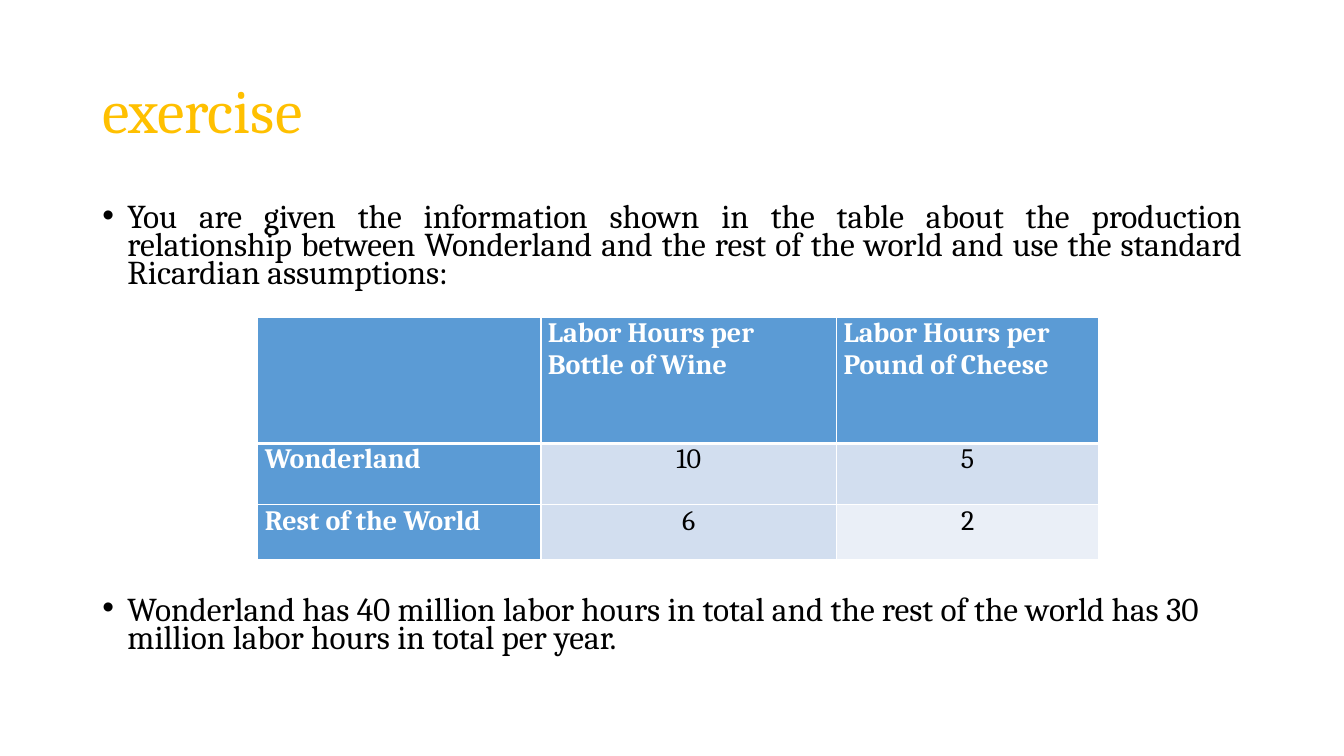
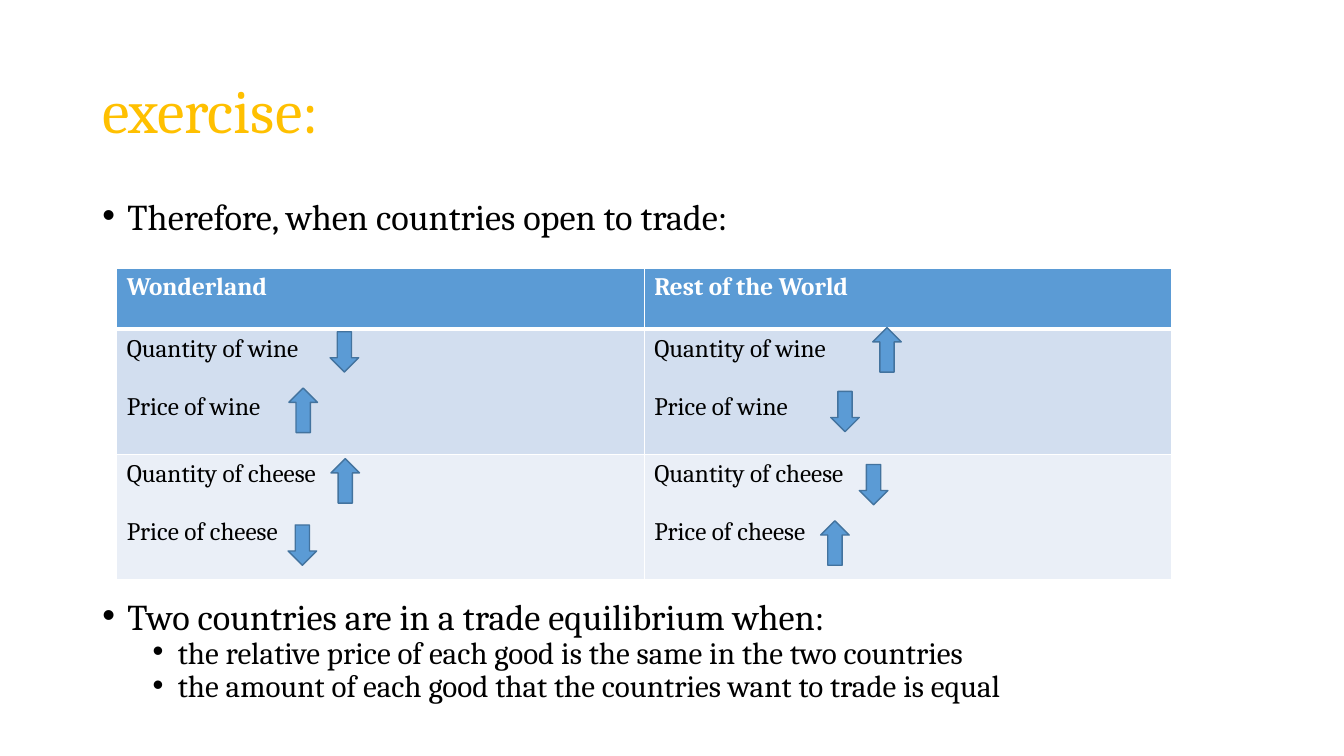
import itertools

import lxml.etree
import pptx
import pptx.dml.color
import pptx.enum.shapes
import pptx.enum.text
import pptx.oxml.ns
import pptx.util

COLUMNS, ROWS = 160, 90
UNIT = pptx.util.Inches(7.5) / ROWS
FONT = "Cambria"
GOLD, BLACK, WHITE = "FFC000", "000000", "FFFFFF"
BLUE, BLUE_EDGE = "5B9BD5", "43739E"
BAND_DARK, BAND_LIGHT = "D2DEEF", "EAEFF7"
MARGIN, TEXT_WIDTH, BODY_TOP = 11, 138, 24
TITLE_BOX = (MARGIN, 4.8, TEXT_WIDTH, 17.4)
ARROW_WIDTH = 3.4
ALIGN = pptx.enum.text.PP_ALIGN
ARROWS = {
    "down": (pptx.enum.shapes.MSO_SHAPE.DOWN_ARROW, 4.8),
    "up": (pptx.enum.shapes.MSO_SHAPE.UP_ARROW, 5.3),
}

LABOR_HOURS = [
    ["", "Labor Hours per Bottle of Wine", "Labor Hours per Pound of Cheese"],
    ["Wonderland", "10", "5"],
    ["Rest of the World", "6", "2"],
]
COUNTRIES = ["Wonderland", "Rest of the World"]
GOODS = ["wine", "cheese"]
TRADE_EFFECTS = [
    [[("down", 25.4, 0.3), ("up", 20.5, 7)], [("up", 27.2, -0.2), ("down", 22.2, 7.4)]],
    [[("up", 25.5, 0.5), ("down", 20.4, 8.4)], [("down", 25.6, 1.2), ("up", 21, 7.9)]],
]


def grid(units):
    """Turn grid units into a length."""
    return pptx.util.Emu(round(units * UNIT))


def color(hex_text):
    """Turn a hex string into a colour."""
    return pptx.dml.color.RGBColor.from_string(hex_text)


def add_run(paragraph, text, size, hex_text, bold=False):
    """Add one formatted run to a paragraph."""
    run = paragraph.add_run()
    run.text = text
    run.font.name = FONT
    run.font.size = pptx.util.Pt(size)
    run.font.bold = bold
    run.font.color.rgb = color(hex_text)


def add_titled_slide(deck, title):
    """Add a title-only slide with the shared title style."""
    slide = deck.slides.add_slide(deck.slide_layouts[5])
    heading = slide.shapes.title
    heading.left, heading.top, heading.width, heading.height = map(grid, TITLE_BOX)
    frame = heading.text_frame
    frame.auto_size = pptx.enum.text.MSO_AUTO_SIZE.NONE
    frame.vertical_anchor = pptx.enum.text.MSO_ANCHOR.MIDDLE
    paragraph = frame.paragraphs[0]
    paragraph.alignment = ALIGN.LEFT
    paragraph.line_spacing = 0.9
    add_run(paragraph, title, 44, GOLD)
    return slide


def add_bullets(slide, box, items, size, sub_size=None, alignment=ALIGN.LEFT):
    """Place (level, text) bullets in a box."""
    frame = slide.shapes.add_textbox(*map(grid, box)).text_frame
    frame.word_wrap = True
    for index, (level, text) in enumerate(items):
        paragraph = frame.add_paragraph() if index else frame.paragraphs[0]
        paragraph.level = level
        paragraph.alignment = alignment
        paragraph.line_spacing = 0.7
        paragraph.space_before = pptx.util.Pt(5 if level else 10)
        properties = paragraph._p.get_or_add_pPr()
        properties.set("marL", str(pptx.util.Inches(0.25 + 0.5 * level)))
        properties.set("indent", str(pptx.util.Inches(-0.25)))
        for tag, key, value in (("a:buFont", "typeface", "Arial"), ("a:buChar", "char", "•")):
            lxml.etree.SubElement(properties, pptx.oxml.ns.qn(tag)).set(key, value)
        add_run(paragraph, text, sub_size if level else size, BLACK)


def style_cell(cell, fill, is_header):
    """Fill a cell and give it white borders, thick below the header."""
    cell.fill.solid()
    cell.fill.fore_color.rgb = color(fill)
    properties = cell._tc.get_or_add_tcPr()
    for index, side in enumerate(("lnL", "lnR", "lnT", "lnB")):
        border = lxml.etree.Element(pptx.oxml.ns.qn("a:" + side))
        points = 3 if is_header and side == "lnB" else 1
        border.set("w", str(pptx.util.Pt(points)))
        paint = lxml.etree.SubElement(border, pptx.oxml.ns.qn("a:solidFill"))
        lxml.etree.SubElement(paint, pptx.oxml.ns.qn("a:srgbClr")).set("val", WHITE)
        properties.insert(index, border)


def add_grid_table(slide, left, top, widths, heights):
    """Add an unbanded table with the given column widths and row heights."""
    box = (left, top, sum(widths), sum(heights))
    table = slide.shapes.add_table(len(heights), len(widths), *map(grid, box)).table
    table.horz_banding = False
    for column, width in zip(table.columns, widths):
        column.width = grid(width)
    for row, height in zip(table.rows, heights):
        row.height = grid(height)
    return table


def add_labor_table(slide, left, top):
    """Place the table of labor hours."""
    table = add_grid_table(slide, left, top, [33.7, 35.2, 31.2], [15, 7.3, 6.5])
    for row, column in itertools.product(range(3), range(3)):
        cell = table.cell(row, column)
        is_label = row == 0 or column == 0
        value_fill = BAND_LIGHT if row == column == 2 else BAND_DARK
        style_cell(cell, BLUE if is_label else value_fill, row == 0)
        cell.margin_left = cell.margin_right = pptx.util.Inches(0.07)
        cell.margin_top = cell.margin_bottom = 0
        paragraph = cell.text_frame.paragraphs[0]
        paragraph.alignment = ALIGN.LEFT if is_label else ALIGN.CENTER
        text = LABOR_HOURS[row][column]
        if text:
            add_run(paragraph, text, 20, WHITE if is_label else BLACK, is_label)
        else:
            paragraph.font.size = pptx.util.Pt(20)


def add_arrow(slide, direction, left, top):
    """Place one arrow that shows a rise or a fall."""
    preset, height = ARROWS[direction]
    arrow = slide.shapes.add_shape(preset, *map(grid, (left, top, ARROW_WIDTH, height)))
    arrow.shadow.inherit = False
    arrow.fill.solid()
    arrow.fill.fore_color.rgb = color(BLUE)
    arrow.line.color.rgb = color(BLUE_EDGE)
    arrow.line.width = pptx.util.Pt(1)


def add_trade_table(slide, left, top):
    """Place the table of trade effects and the arrows in its cells."""
    country_width, header_height, good_height = 62.8, 7.3, 14.9
    table = add_grid_table(
        slide, left, top, [country_width] * 2, [header_height] + [good_height] * 2
    )
    for column, country in enumerate(COUNTRIES):
        header = table.cell(0, column)
        style_cell(header, BLUE, True)
        add_run(header.text_frame.paragraphs[0], country, 18, WHITE, True)
        for row, good in enumerate(GOODS):
            cell = table.cell(row + 1, column)
            style_cell(cell, (BAND_DARK, BAND_LIGHT)[row], False)
            frame = cell.text_frame
            add_run(frame.paragraphs[0], f"Quantity of {good}", 18, BLACK)
            price = frame.add_paragraph()
            price.space_before = pptx.util.Pt(21)
            add_run(price, f"Price of {good}", 18, BLACK)
            cell_left = left + column * country_width
            cell_top = top + header_height + row * good_height
            for direction, across, down in TRADE_EFFECTS[row][column]:
                add_arrow(slide, direction, cell_left + across, cell_top + down)


def build_labor_slide(deck):
    """Build the slide with the exercise data."""
    slide = add_titled_slide(deck, "exercise")
    premise = (
        "You are given the information shown in the table about the production "
        "relationship between Wonderland and the rest of the world and use the "
        "standard Ricardian assumptions:"
    )
    endowment = (
        "Wonderland has 40 million labor hours in total and the rest of the world "
        "has 30 million labor hours in total per year."
    )
    add_bullets(slide, (MARGIN, BODY_TOP, TEXT_WIDTH, 12), [(0, premise)], 23.8,
                alignment=ALIGN.JUSTIFY)
    add_labor_table(slide, 30.7, 37.8)
    add_bullets(slide, (MARGIN, 70.7, TEXT_WIDTH, 10), [(0, endowment)], 23.8)


def build_trade_slide(deck):
    """Build the slide with the effects of trade."""
    slide = add_titled_slide(deck, "exercise:")
    opening = [(0, "Therefore, when countries open to trade:")]
    equilibrium = [
        (0, "Two countries are in a trade equilibrium when:"),
        (1, "the relative price of each good is the same in the two countries"),
        (1, "the amount of each good that the countries want to trade is equal"),
    ]
    add_bullets(slide, (MARGIN, BODY_TOP, TEXT_WIDTH, 6), opening, 25.9)
    add_trade_table(slide, 13.9, 31.9)
    add_bullets(slide, (MARGIN, 71.6, TEXT_WIDTH, 14), equilibrium, 25.9, 22.2)


def main():
    """Build and save the presentation."""
    deck = pptx.Presentation()
    deck.slide_width, deck.slide_height = grid(COLUMNS), grid(ROWS)
    build_labor_slide(deck)
    build_trade_slide(deck)
    deck.save("out.pptx")


if __name__ == "__main__":
    main()
